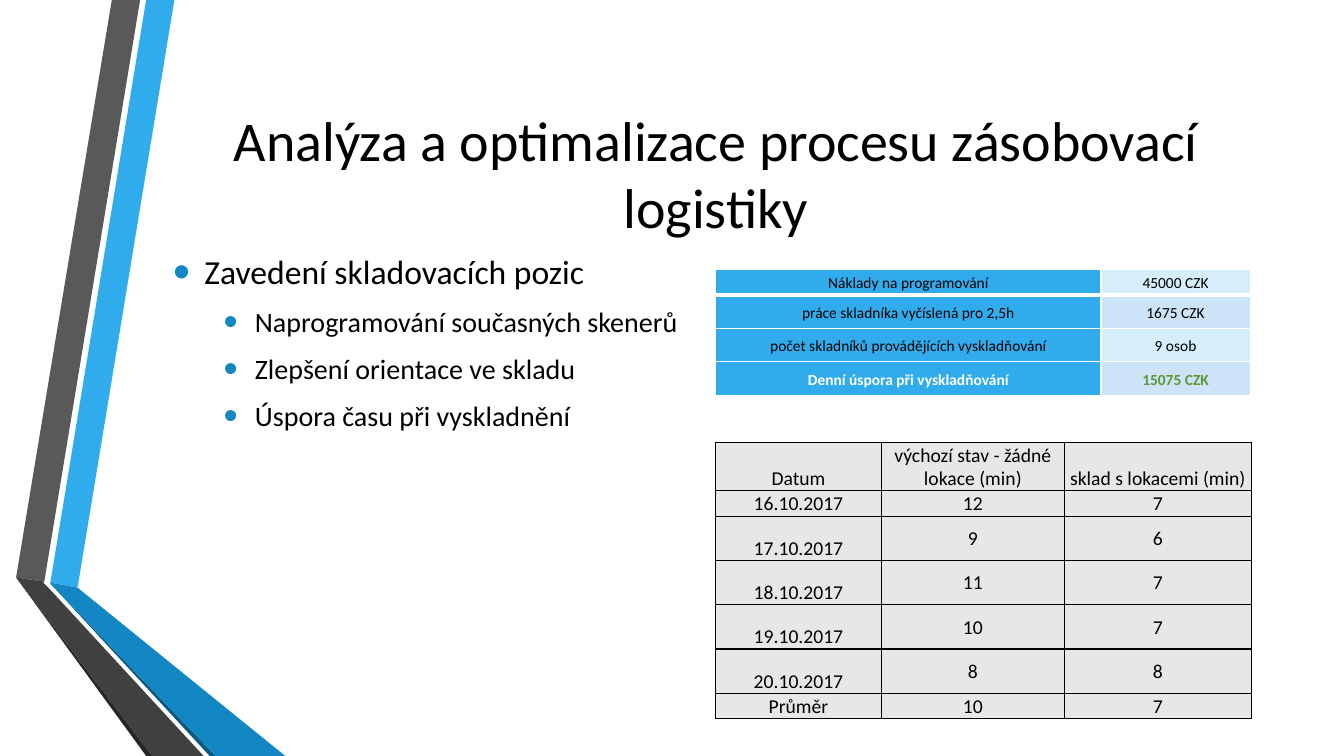
from lxml.etree import SubElement
from pptx import Presentation
from pptx.dml.color import RGBColor
from pptx.enum.text import MSO_ANCHOR, PP_ALIGN
from pptx.oxml.ns import qn
from pptx.util import Inches, Pt

COLORS = {
    "blue": "30ACEC", "deep": "1287C3", "navy": "0C5A82",
    "gray": "595959", "dark": "404040", "coal": "262626",
    "pale": "D6EEFB", "ice": "CDE3F8", "ash": "E7E7E7",
    "black": "000000", "white": "FFFFFF", "green": "5F9934",
}


def add_text(para, text, size, color="black", bold=False):
    run = para.add_run()
    run.text = text
    run.font.name = "Calibri"
    run.font.size = Pt(size)
    run.font.bold = bold
    run.font.color.rgb = RGBColor.from_string(COLORS[color])


def style_cell(cell, fill, color, widths, margins):
    """Fill a cell, set its margins and draw its left, right, top, bottom lines."""
    cell.margin_left, cell.margin_top, cell.margin_right, cell.margin_bottom = map(Inches, margins)
    props = cell._tc.get_or_add_tcPr()
    for side, width in zip(("lnL", "lnR", "lnT", "lnB"), widths):
        line = SubElement(props, qn(f"a:{side}"), w=str(Pt(width)))
        solid = SubElement(line, qn("a:solidFill"))
        SubElement(solid, qn("a:srgbClr"), val=COLORS[color])
    cell.fill.solid()
    cell.fill.fore_color.rgb = RGBColor.from_string(COLORS[fill])


prs = Presentation()
prs.slide_width, prs.slide_height = Inches(13.33), Inches(7.5)
slide = prs.slides.add_slide(prs.slide_layouts[6])
shapes = slide.shapes

# Ribbons on the left, points in hundredths of an inch
ribbons = [
    ("blue", [(50, 578), (77, 583), (173, 0), (145, 0)]),
    ("gray", [(139, 0), (111, 0), (16, 573), (44, 577)]),
    ("coal", [(16, 573), (145, 750), (151, 750)]),
    ("navy", [(50, 579), (208, 750), (214, 750)]),
    ("deep", [(50, 579), (214, 750), (283, 750), (77, 583), (50, 578)]),
    ("dark", [(202, 750), (48, 583), (43, 578), (44, 577), (16, 573), (151, 750)]),
]
for color, points in ribbons:
    outline = shapes.build_freeform(*points[0], scale=Inches(0.01))
    outline.add_line_segments(points[1:], close=True)
    ribbon = outline.convert_to_shape()
    ribbon.shadow.inherit = False
    ribbon.fill.solid()
    ribbon.fill.fore_color.rgb = RGBColor.from_string(COLORS[color])
    ribbon.line.fill.background()

# Title
title = shapes.add_textbox(Inches(1.62), Inches(0.75), Inches(10.96), Inches(1.92)).text_frame
title.word_wrap = True
title.vertical_anchor = MSO_ANCHOR.MIDDLE
title.paragraphs[0].alignment = PP_ALIGN.CENTER
add_text(title.paragraphs[0], "Analýza a optimalizace procesu zásobovací logistiky", 40)

# Bullet list
points = [
    ("Zavedení skladovacích pozic", 0, 24),
    ("Naprogramování současných skenerů", 1, 20),
    ("Zlepšení orientace ve skladu", 1, 20),
    ("Úspora času při vyskladnění", 1, 20),
]
body = shapes.add_textbox(Inches(1.62), Inches(2.47), Inches(10.96), Inches(3.42)).text_frame
body.word_wrap = True
body.margin_top = Inches(0.02)
for i, (text, level, size) in enumerate(points):
    para = body.add_paragraph() if i else body.paragraphs[0]
    para.level = level
    para.space_before = Pt(3.5 if i else 0)
    para.space_after = Pt(6)
    props = para._p.get_or_add_pPr()
    props.set("marL", str(Inches(0.31 + 0.5 * level)))
    props.set("indent", str(Inches(-0.31)))
    tint = SubElement(props, qn("a:buClr"))
    SubElement(tint, qn("a:srgbClr"), val=COLORS["deep"])
    SubElement(props, qn("a:buSzPct"), val="145000")
    SubElement(props, qn("a:buFont"), typeface="Arial")
    SubElement(props, qn("a:buChar"), char="•")
    add_text(para, text, size)

# Picking times and daily savings
times = [
    ("Datum", "výchozí stav - žádné lokace (min)", "sklad s lokacemi (min)"),
    ("16.10.2017", "12", "7"),
    ("17.10.2017", "9", "6"),
    ("18.10.2017", "11", "7"),
    ("19.10.2017", "10", "7"),
    ("20.10.2017", "8", "8"),
    ("Průměr", "10", "7"),
]
costs = [
    ("Náklady na programování", "45000 CZK"),
    ("práce skladníka vyčíslená pro 2,5h", "1675 CZK"),
    ("počet skladníků provádějících vyskladňování", "9 osob"),
    ("Denní úspora při vyskladňování", "15075 CZK"),
]
tables = [
    ("times", times, 4.39, [1.64, 1.82, 1.85], [0.48, 0.25] + [0.44] * 4 + [0.25]),
    ("costs", costs, 2.67, [3.82, 1.48], [0.26] + [0.33] * 3),
]
for name, rows, top, cols, heights in tables:
    frame = shapes.add_table(len(rows), len(cols), Inches(7.1), Inches(top),
                             Inches(sum(cols)), Inches(sum(heights)))
    table = frame.table
    table.first_row = table.horz_banding = False
    for col, width in zip(table.columns, cols):
        col.width = Inches(width)
    for r, row in enumerate(rows):
        table.rows[r].height = Inches(heights[r])
        for c, text in enumerate(row):
            cell = table.cell(r, c)
            para = cell.text_frame.paragraphs[0]
            para.alignment = PP_ALIGN.CENTER
            cell.vertical_anchor = MSO_ANCHOR.MIDDLE
            if name == "times":
                if r == 0 or c == 0:
                    cell.vertical_anchor = MSO_ANCHOR.BOTTOM
                add_text(para, text, 14)
                style_cell(cell, "ash", "black", (1, 1, 1, 1), (0.01, 0.01, 0.01, 0))
            else:
                last = r == len(rows) - 1
                color = ("white", "green")[c] if last else "black"
                fill = "blue" if c == 0 else ("pale", "ice")[r % 2]
                para.line_spacing = 1.15
                add_text(para, text, 11, color, last)
                lines = (1, 1, 3 if r == 1 else 1, 3 if r == 0 else 1)
                style_cell(cell, fill, "white", lines, (0.05, 0.01, 0.05, 0.01))

prs.save("out.pptx")
